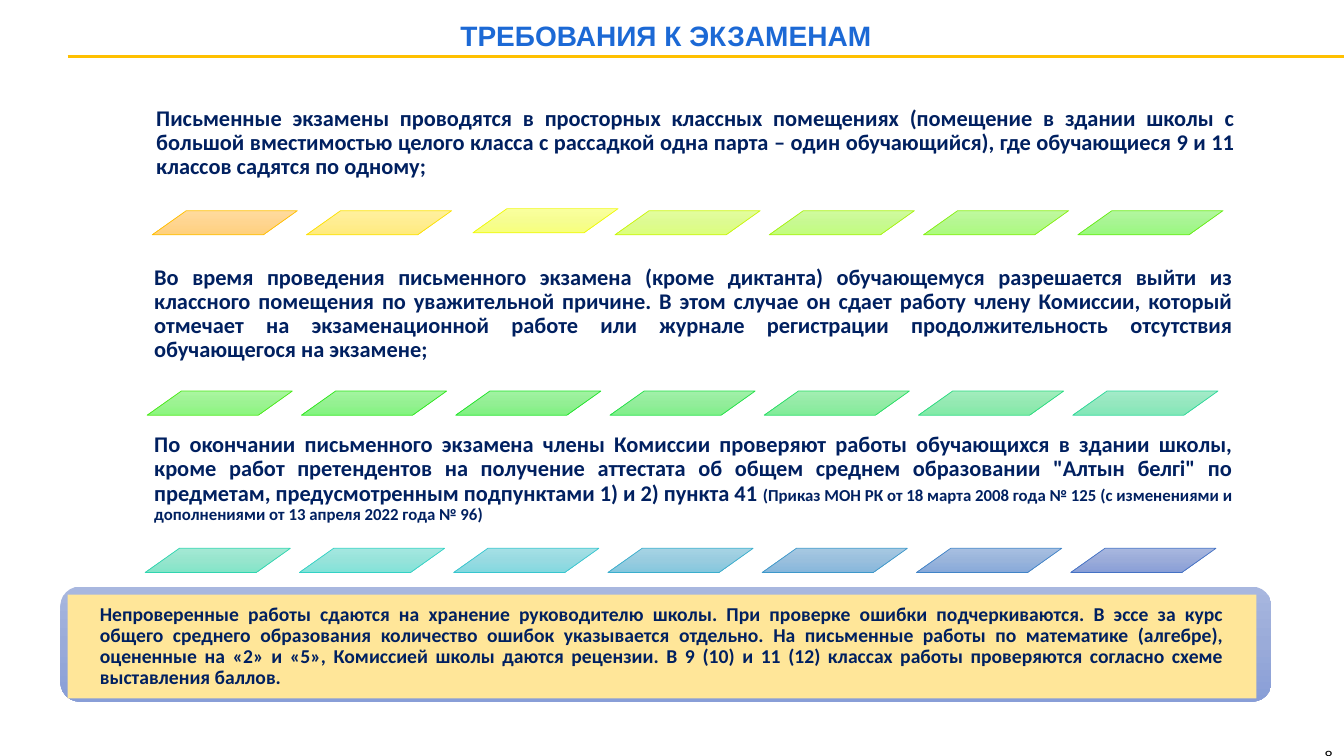
from copy import deepcopy
from dataclasses import dataclass

from lxml import etree
from pptx import Presentation
from pptx import util as u
from pptx.dml.color import RGBColor
from pptx.enum import shapes, text
from pptx.oxml.ns import qn

EMU_PER_PX = 9144  # 100 px to the inch

COLORS = {
    "title": "1C69D5",
    "rule": "FFC000",
    "body": "002060",
    "number": "000000",
    "panel": "FFE699",
}

# Tile outline -> gradient from top to bottom
GRADIENTS = {
    "FFC000": ("FFDB9E", "FFD590", "FFD07C"),
    "FCE204": ("FFF09E", "FFED91", "FFEB7C"),
    "EFF907": ("F9FF9E", "F6FD91", "F7FF7C"),
    "CAF60A": ("E3FD9E", "DDFB91", "DCFF7C"),
    "A7F30E": ("D0FB9F", "C7F991", "C2FE7C"),
    "86F011": ("C0F99F", "B5F791", "ABFB7D"),
    "67ED15": ("B3F79F", "A7F592", "98F97D"),
    "4AEA18": ("AAF6A0", "9CF392", "8AF67D"),
    "2EE71C": ("A3F4A0", "95F192", "81F47E"),
    "1FE429": ("A1F2A2", "93EF94", "7EF180"),
    "23E148": ("A1F0A9", "93ED9B", "7FEF89"),
    "26DE65": ("A2EEB2", "94EBA6", "7FEC97"),
    "29DB80": ("A2EDBD", "94E9B2", "80EAA6"),
    "2DD899": ("A3EBC8", "95E7BF", "81E7B7"),
    "30D5B0": ("A4E9D4", "96E5CD", "82E5C8"),
    "33D2C5": ("A4E7E0", "96E3DA", "82E3D9"),
    "37C6CF": ("A5E0E6", "97DAE1", "83D9E0"),
    "3AAECD": ("A6D3E4", "98CCDF", "84C7DE"),
    "3D98CA": ("A6C8E2", "99BFDD", "86B7DC"),
    "4184C7": ("A7BFE1", "99B4DB", "87A9DA"),
    "4472C4": ("A8B7DF", "9AABD9", "889ED7"),
}
TILES_PER_ROW, TILE_PITCH = 7, 153
TILE_WIDTH, TILE_HEIGHT = 144, 24
TILE_NUDGES = {2: (12, -2)}  # the yellow tile sits off the grid


@dataclass(frozen=True)
class TextRun:
    wording: str
    size: float
    color: str = "body"
    font: str = "Calibri"
    bold: bool = True


@dataclass(frozen=True)
class Requirement:
    left: int
    top: int
    runs: tuple[TextRun, ...]
    tiles_left: int
    tiles_top: int


REQUIREMENTS = (
    Requirement(148, 99, (TextRun(
        "Письменные экзамены проводятся в просторных классных помещениях "
        "(помещение в здании школы с большой вместимостью целого класса с "
        "рассадкой одна парта – один обучающийся), где обучающиеся 9 и 11 "
        "классов садятся по одному;", 16),), 151, 209),
    Requirement(146, 257, (TextRun(
        "Во время проведения письменного экзамена (кроме диктанта) "
        "обучающемуся разрешается выйти из классного помещения по "
        "уважительной причине. В этом случае он сдает работу члену Комиссии, "
        "который отмечает на экзаменационной работе или журнале регистрации "
        "продолжительность отсутствия обучающегося на экзамене;", 16),), 146, 388),
    Requirement(146, 423, (
        TextRun(
            "По окончании письменного экзамена члены Комиссии проверяют работы "
            "обучающихся в здании школы, кроме работ претендентов на получение "
            "аттестата об общем среднем образовании \"Алтын белгі\" по "
            "предметам, предусмотренным подпунктами 1) и 2) пункта 41 ", 16),
        TextRun(
            "(Приказ МОН РК от 18 марта 2008 года № 125 (с изменениями и "
            "дополнениями от 13 апреля 2022 года № 96)", 12)), 144, 544),
)
CLOSING_NOTE = TextRun(
    "Непроверенные работы сдаются на хранение руководителю школы. При проверке "
    "ошибки подчеркиваются. В эссе за курс общего среднего образования "
    "количество ошибок указывается отдельно. На письменные работы по математике "
    "(алгебре), оцененные на «2» и «5», Комиссией школы даются рецензии. "
    "В 9 (10) и 11 (12) классах работы проверяются согласно схеме выставления "
    "баллов.", 14)


def px(*lengths: int) -> list[u.Emu]:
    return [u.Emu(length * EMU_PER_PX) for length in lengths]


def add_run(paragraph, item: TextRun):
    run = paragraph.add_run()
    run.text = item.wording
    run.font.name, run.font.size, run.font.bold = item.font, u.Pt(item.size), item.bold
    run.font.color.rgb = RGBColor.from_string(COLORS[item.color])
    return run


def write_justified(frame, runs: tuple[TextRun, ...], side: int, edge: int) -> None:
    frame.word_wrap = True
    frame.margin_left, frame.margin_right = px(side, side)
    frame.margin_top, frame.margin_bottom = px(edge, edge)
    paragraph = frame.paragraphs[0]
    paragraph.alignment = text.PP_ALIGN.JUSTIFY
    paragraph.line_spacing = 0.9
    for item in runs:
        add_run(paragraph, item)


def add_plain_shape(slide, kind, left: int, top: int, width: int, height: int):
    shape = slide.shapes.add_shape(kind, *px(left, top, width, height))
    shape.shadow.inherit = False
    shape.line.fill.background()
    return shape


def fill_gradient(shape, colors: tuple[str, ...]) -> None:
    shape.fill.gradient()
    shape.fill.gradient_angle = 270
    stop_list = shape.element.spPr.find(".//" + qn("a:gsLst"))
    stop_list.append(deepcopy(stop_list[0]))
    for index, (stop, color) in enumerate(zip(shape.fill.gradient_stops, colors)):
        stop.position = index / (len(colors) - 1)
        stop.color.rgb = RGBColor.from_string(color)


def add_tile(slide, left: int, top: int, outline: str) -> None:
    tile = add_plain_shape(slide, shapes.MSO_SHAPE.PARALLELOGRAM,
                           left, top, TILE_WIDTH, TILE_HEIGHT)
    tile.adjustments[0] = 1.41
    fill_gradient(tile, GRADIENTS[outline])
    tile.line.color.rgb = RGBColor.from_string(outline)
    tile.line.width = u.Pt(0.5)


def add_heading(slide) -> None:
    title = slide.shapes.title
    title.left, title.top, title.width, title.height = px(445, 13, 431, 44)
    frame = title.text_frame
    frame.word_wrap = False
    frame.auto_size = text.MSO_AUTO_SIZE.NONE
    frame.vertical_anchor = text.MSO_ANCHOR.MIDDLE
    frame.paragraphs[0].alignment = text.PP_ALIGN.CENTER
    add_run(frame.paragraphs[0], TextRun("ТРЕБОВАНИЯ К ЭКЗАМЕНАМ", 20, "title", "Arial"))

    rule = slide.shapes.add_connector(shapes.MSO_CONNECTOR.STRAIGHT, *px(67, 56, 1333, 56))
    rule.line.color.rgb = RGBColor.from_string(COLORS["rule"])
    rule.line.width = u.Pt(2.25)
    etree.SubElement(rule.element.spPr, qn("a:effectLst"))


def add_page_number(slide) -> None:
    box = slide.shapes.add_textbox(*px(1304, 736, 28, 29))
    box.text_frame.word_wrap = False
    run = add_run(box.text_frame.paragraphs[0], TextRun("8", 10.5, "number", "Arial", False))
    run.font._element.set("spc", "-50")


def add_requirements(slide) -> None:
    outlines = list(GRADIENTS)
    for row, item in enumerate(REQUIREMENTS):
        box = slide.shapes.add_textbox(*px(item.left, item.top, 1084, 99))
        write_justified(box.text_frame, item.runs, 7, 7)
        for column in range(TILES_PER_ROW):
            index = row * TILES_PER_ROW + column
            shift_x, shift_y = TILE_NUDGES.get(index, (0, 0))
            add_tile(slide, item.tiles_left + column * TILE_PITCH + shift_x,
                     item.tiles_top + shift_y, outlines[index])


def add_closing_note(slide) -> None:
    backing = add_plain_shape(slide, shapes.MSO_SHAPE.ROUNDED_RECTANGLE, 60, 582, 1201, 114)
    fill_gradient(backing, GRADIENTS["4472C4"])
    panel = add_plain_shape(slide, shapes.MSO_SHAPE.RECTANGLE, 67, 590, 1179, 103)
    panel.fill.solid()
    panel.fill.fore_color.rgb = RGBColor.from_string(COLORS["panel"])
    panel.text_frame.vertical_anchor = text.MSO_ANCHOR.MIDDLE
    write_justified(panel.text_frame, (CLOSING_NOTE,), 32, 0)


def main() -> None:
    presentation = Presentation()
    presentation.slide_width, presentation.slide_height = px(1333, 750)
    slide = presentation.slides.add_slide(presentation.slide_layouts[5])
    add_heading(slide)
    add_page_number(slide)
    add_requirements(slide)
    add_closing_note(slide)
    presentation.save("out.pptx")


if __name__ == "__main__":
    main()
